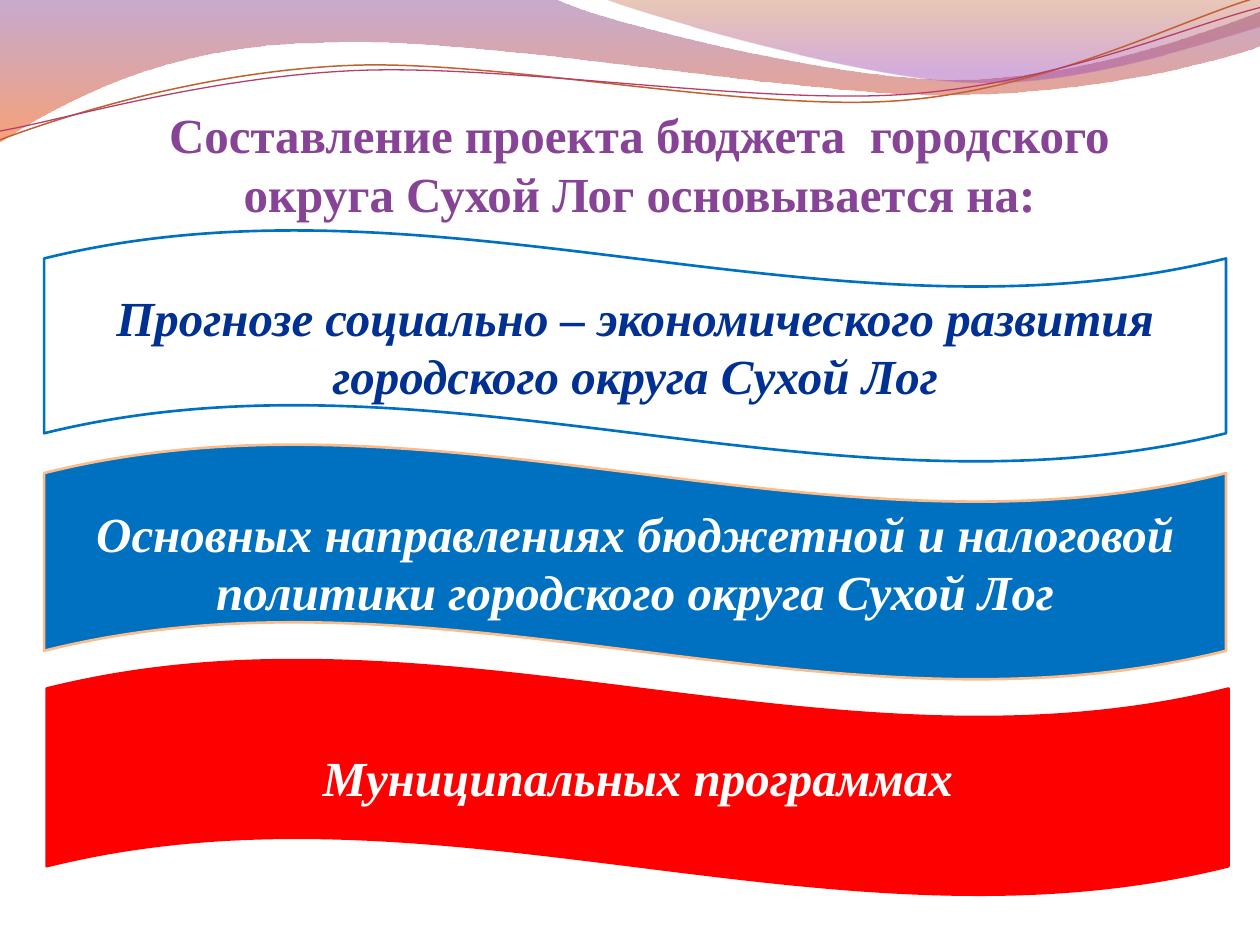
from lxml.etree import SubElement
from pptx import Presentation
from pptx.dml.color import RGBColor
from pptx.enum.shapes import MSO_SHAPE
from pptx.enum.text import MSO_ANCHOR, PP_ALIGN
from pptx.oxml.ns import qn
from pptx.oxml.xmlchemy import OxmlElement
from pptx.util import Inches, Pt

WHITE = RGBColor(0xFF, 0xFF, 0xFF)
BLUE = RGBColor(0x00, 0x70, 0xC0)
NAVY = RGBColor(0x00, 0x31, 0x92)
PEACH = RGBColor(0xFC, 0xBB, 0x8B)
RED = RGBColor(0xFF, 0x00, 0x00)
PURPLE = RGBColor(0x87, 0x43, 0x96)
VIOLET = RGBColor(0x83, 0x45, 0x91)
ORANGE = RGBColor(0xF3, 0x53, 0x07)
BROWN = RGBColor(0xB7, 0x49, 0x15)
LILAC = RGBColor(0xA1, 0x4B, 0xB4)
RUST = RGBColor(0xC4, 0x5F, 0x30)
CRIMSON = RGBColor(0xB8, 0x3D, 0x68)
FONT = "Times New Roman"

TITLE = "Составление проекта бюджета  городского округа Сухой Лог основывается на:"
TITLE_BOX = (1.17, 0.78, 7.81, 1.04)
BASES = [
    ("Прогнозе социально – экономического развития городского округа Сухой Лог",
     (0.35, 1.82, 9.38, 1.85), WHITE, BLUE, NAVY),
    ("Основных направлениях бюджетной и налоговой политики городского округа Сухой Лог",
     (0.35, 3.52, 9.38, 1.88), BLUE, PEACH, WHITE),
    ("Муниципальных программах",
     (0.37, 5.23, 9.38, 1.88), RED, RED, WHITE),
]

RIBBONS = [
    ((0, -0.01),
     [[(4.4, -0.01)],
      [(4.76, 0.17), (6.64, 0.63), (7.58, 0.63)],
      [(8.53, 0.63), (9.58, 0.26), (10, 0.09)],
      [(10.01, 0.36)],
      [(9.83, 0.44), (8.7, 0.76), (7.46, 0.75)],
      [(6.22, 0.75), (3.82, 0.28), (2.57, 0.34)],
      [(1.29, 0.35), (0.46, 0.83), (-0.01, 1.13)]],
     [(0, VIOLET, 45), (1, ORANGE, 55)]),
    ((4.79, -0.01),
     [[(5.09, 0.11), (6.82, 0.62), (7.69, 0.65)],
      [(8.56, 0.69), (9.61, 0.32), (10, 0.21)],
      [(10, 0)]],
     [(0, BROWN, 30), (0.8, LILAC, 45)]),
]
THREADS = [
    ((0, 1.11),
     [[(0.48, 0.93), (1.58, 0.57), (2.77, 0.52)],
      [(3.95, 0.47), (5.93, 0.89), (7.13, 0.8)],
      [(8.33, 0.71), (9.38, 0.15), (9.98, -0.02)]],
     RUST, 0.85),
    ((0, 1.04),
     [[(0.47, 0.96), (1.64, 0.61), (2.83, 0.56)],
      [(4.03, 0.51), (5.97, 0.83), (7.17, 0.75)],
      [(8.36, 0.67), (9.41, 0.21), (10, 0.06)]],
     CRIMSON, 0.75),
]


def add_outline(slide, start, segments, close):
    corners = [(Inches(x), Inches(y)) for segment in segments for x, y in segment]
    builder = slide.shapes.build_freeform(*map(Inches, start))
    builder.add_line_segments(corners, close=close)
    outline = builder.convert_to_shape()
    outline.shadow.inherit = False
    steps = iter(list(outline._element.iter(qn("a:lnTo"))))
    for segment in segments:
        legs = [next(steps) for _ in segment]
        if len(legs) == 3:
            curve = OxmlElement("a:cubicBezTo")
            legs[0].addprevious(curve)
            for leg in legs:
                curve.append(leg[0])
                leg.getparent().remove(leg)
    return outline


def add_ribbon(slide, start, segments, stops):
    ribbon = add_outline(slide, start, segments, True)
    ribbon.line.fill.background()
    ribbon.fill.gradient()
    ribbon.fill.gradient_angle = 270
    for stop, (position, color, _) in zip(ribbon.fill.gradient_stops, stops):
        stop.position = position
        stop.color.rgb = color
    colors = ribbon._element.spPr.iter(qn("a:srgbClr"))
    for color, (_, _, opacity) in zip(colors, stops):
        SubElement(color, qn("a:alpha")).set("val", str(opacity * 1000))


def add_thread(slide, start, segments, color, width):
    thread = add_outline(slide, start, segments, False)
    thread.fill.background()
    thread.line.color.rgb = color
    thread.line.width = Pt(width)


def write(frame, text, color, anchor, italic):
    frame.word_wrap = True
    frame.vertical_anchor = anchor
    frame.text = text
    paragraph = frame.paragraphs[0]
    paragraph.alignment = PP_ALIGN.CENTER
    font = paragraph.font
    font.name, font.size, font.bold, font.italic = FONT, Pt(28), True, italic
    font.color.rgb = color


def add_base(slide, text, box, fill, border, color):
    wave = slide.shapes.add_shape(MSO_SHAPE.WAVE, *map(Inches, box))
    wave.shadow.inherit = False
    wave.fill.solid()
    wave.fill.fore_color.rgb = fill
    wave.line.color.rgb = border
    wave.line.width = Pt(1.5)
    write(wave.text_frame, text, color, MSO_ANCHOR.MIDDLE, True)


def main():
    deck = Presentation()
    deck.slide_width, deck.slide_height = Inches(10), Inches(7.5)
    slide = deck.slides.add_slide(deck.slide_layouts[5])
    slide.background.fill.solid()
    slide.background.fill.fore_color.rgb = WHITE

    for ribbon in RIBBONS:
        add_ribbon(slide, *ribbon)
    for thread in THREADS:
        add_thread(slide, *thread)

    title = slide.shapes.title
    title.left, title.top, title.width, title.height = map(Inches, TITLE_BOX)
    write(title.text_frame, TITLE, PURPLE, MSO_ANCHOR.TOP, False)

    for base in BASES:
        add_base(slide, *base)
    deck.save("out.pptx")


if __name__ == "__main__":
    main()
